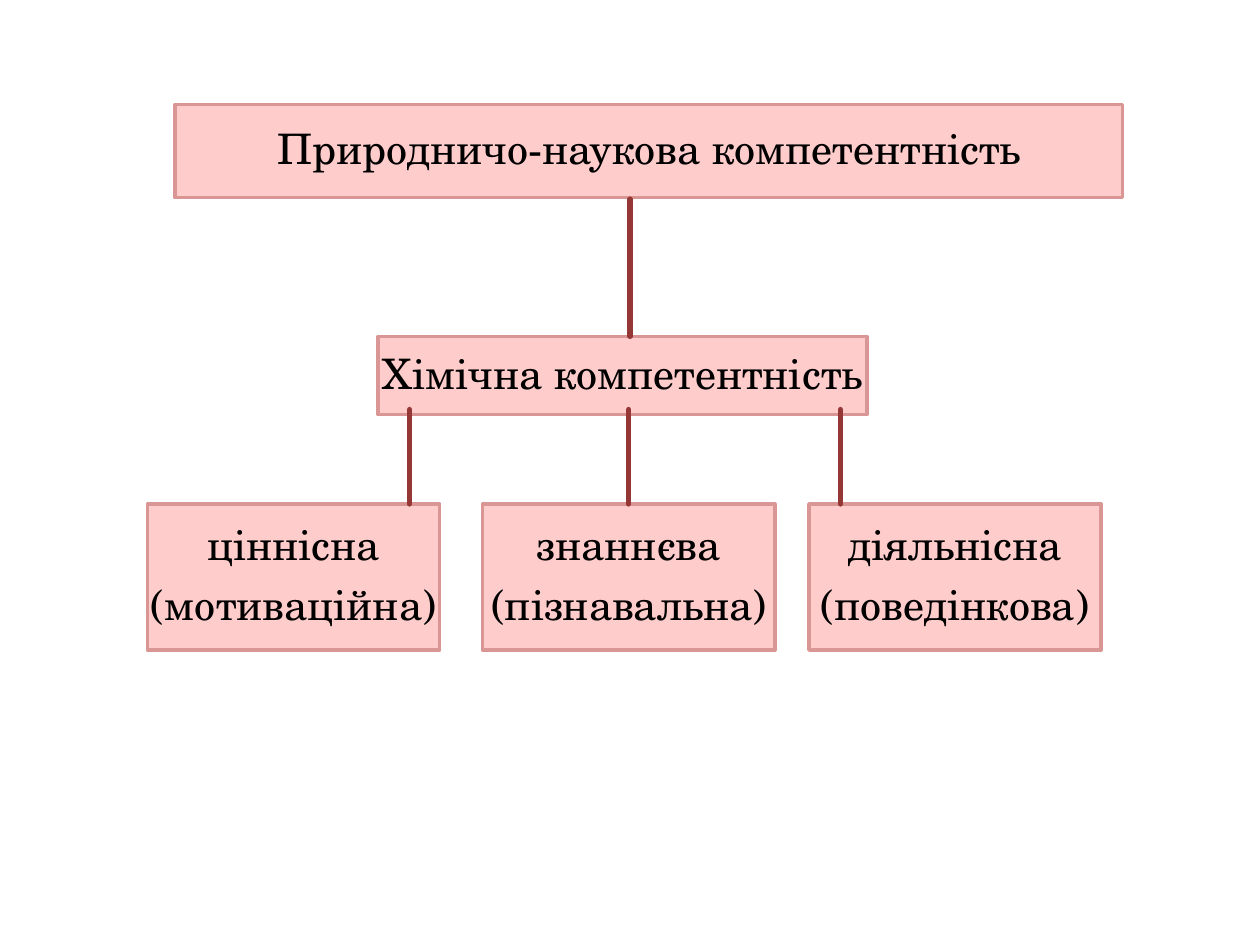
from dataclasses import dataclass

from lxml.etree import SubElement
from pptx import Presentation
from pptx.dml.color import RGBColor
from pptx.enum.shapes import MSO_CONNECTOR, MSO_SHAPE
from pptx.enum.text import MSO_ANCHOR, PP_ALIGN
from pptx.oxml.ns import qn
from pptx.util import Pt

SCALE = 9144


def px(n):
    return n * SCALE


@dataclass(frozen=True)
class Theme:
    font: str = "TeX Gyre Schola"
    size: float = 24
    gap: float = 8.4
    text: RGBColor = RGBColor(0, 0, 0)
    fill: RGBColor = RGBColor(0xFF, 0xCC, 0xCC)
    edge: RGBColor = RGBColor(0xD9, 0x96, 0x94)
    link: RGBColor = RGBColor(0x95, 0x37, 0x35)


class Chart:
    def __init__(self, slide, theme):
        self.slide = slide
        self.theme = theme

    def box(self, left, top, width, height, *lines):
        theme = self.theme
        shape = self.slide.shapes.add_shape(
            MSO_SHAPE.RECTANGLE, px(left), px(top), px(width), px(height))
        shape.shadow.inherit = False
        shape.fill.solid()
        shape.fill.fore_color.rgb = theme.fill
        shape.line.color.rgb = theme.edge
        shape.line.width = Pt(2)
        frame = shape.text_frame
        frame.word_wrap = True
        frame.vertical_anchor = MSO_ANCHOR.MIDDLE
        frame.margin_left = frame.margin_right = px(2)
        frame.margin_top = frame.margin_bottom = px(2)
        for i, line in enumerate(lines):
            para = frame.add_paragraph() if i else frame.paragraphs[0]
            para.alignment = PP_ALIGN.CENTER
            para.line_spacing = 0.9
            para.space_after = Pt(theme.gap)
            run = para.add_run()
            run.text = line
            run.font.name = theme.font
            run.font.size = Pt(theme.size)
            run.font.color.rgb = theme.text
        return shape

    def link(self, x, top, end, target=None):
        line = self.slide.shapes.add_connector(
            MSO_CONNECTOR.STRAIGHT, px(x), px(top), px(x), px(end))
        line.line.color.rgb = self.theme.link
        line.line.width = Pt(3)
        props = line.element.spPr
        props.find(qn("a:ln")).set("cap", "rnd")
        SubElement(props, qn("a:effectLst"))
        if target is not None:
            line.end_connect(target, 0)


def main():
    deck = Presentation()
    deck.slide_width, deck.slide_height = px(1000), px(750)
    chart = Chart(deck.slides.add_slide(deck.slide_layouts[6]), Theme())

    chart.box(139, 83, 752, 74, "Природничо-наукова компетентність")
    leaves = [
        chart.box(left, 400, 232, 116, *lines)
        for left, *lines in (
            (117, "ціннісна", "(мотиваційна)"),
            (383, "знаннєва", "(пізнавальна)"),
            (642, "діяльнісна", "(поведінкова)"),
        )
    ]
    chart.box(300, 267, 388, 62, "Хімічна компетентність")

    chart.link(500, 158, 267)
    chart.link(499, 325, 400, leaves[1])
    for x in (325, 667):
        chart.link(x, 325, 400)

    deck.save("out.pptx")


if __name__ == "__main__":
    main()
